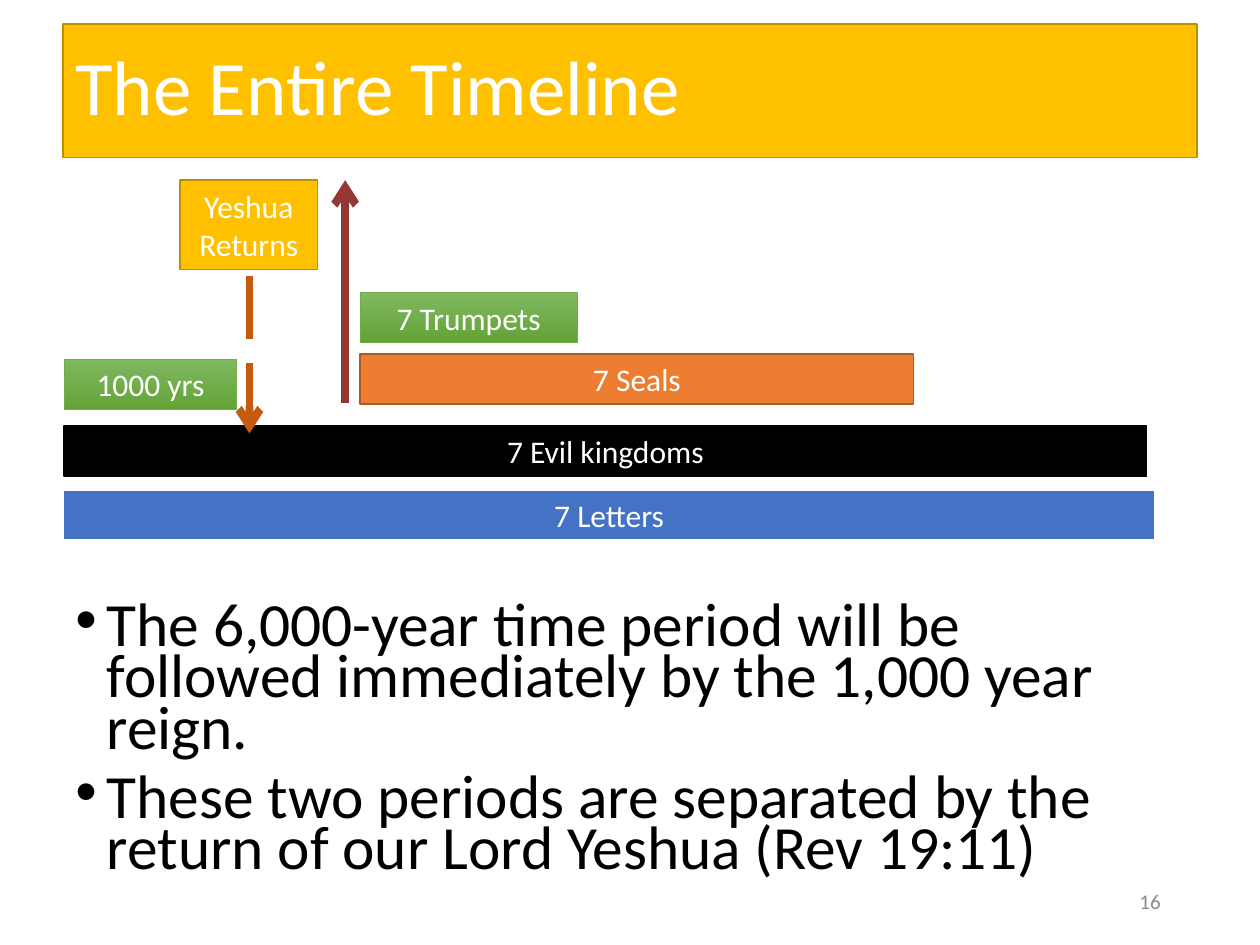
from collections import namedtuple
from dataclasses import dataclass

from lxml import etree
from pptx import Presentation
from pptx import util as u
from pptx.dml.color import RGBColor
from pptx.enum import dml, shapes, text
from pptx.oxml.ns import qn

COLUMNS, ROWS = 100, 75  # grid over the 10 x 7.5 inch slide
CELL = u.Inches(0.1)
Box = namedtuple("Box", "col row cols rows")


@dataclass(frozen=True)
class Theme:
    font: str = "Calibri"
    title_size: float = 44
    body_size: float = 35.1
    label_size: float = 18
    number_size: float = 12
    white: str = "FFFFFF"
    black: str = "000000"
    grey: str = "8C8C8C"
    gold: str = "FFC000"
    gold_edge: str = "BD8E00"
    blue: str = "4472C4"
    orange: str = "ED7D31"
    orange_edge: str = "AF5C24"
    green_edge: str = "70AD47"
    greens: tuple = ("81B861", "62A336")
    rise: str = "953735"
    descent: str = "C55A11"


THEME = Theme()


def rgb(code):
    return RGBColor.from_string(code)


def inside(region, col, row, cols, rows):
    """Turn a box relative to a region into a slide box."""
    return Box(region.col + col, region.row + row, cols, rows)


def emu(box):
    return [round(cells * CELL) for cells in box]


def style(para, size, color, align=text.PP_ALIGN.LEFT):
    para.alignment = align
    para.font.name = THEME.font
    para.font.size = u.Pt(size)
    para.font.color.rgb = rgb(color)


def paint(shape, fill):
    """Fill with one colour, or with a top-to-bottom pair."""
    if isinstance(fill, str):
        shape.fill.solid()
        shape.fill.fore_color.rgb = rgb(fill)
        return
    shape.fill.gradient()
    shape.fill.gradient_angle = 270
    for stop, color, position in zip(shape.fill.gradient_stops, fill, (0, 1)):
        stop.color.rgb = rgb(color)
        stop.position = position


def add_block(page, box, words, fill, edge, edge_width=1,
              size=THEME.label_size, align=text.PP_ALIGN.CENTER):
    block = page.shapes.add_shape(shapes.MSO_SHAPE.RECTANGLE, *emu(box))
    block.shadow.inherit = False
    paint(block, fill)
    block.line.color.rgb = rgb(edge)
    block.line.width = u.Pt(edge_width)
    frame = block.text_frame
    frame.word_wrap = True
    frame.vertical_anchor = text.MSO_ANCHOR.MIDDLE
    para = frame.paragraphs[0]
    para.text = words
    style(para, size, THEME.white, align)
    return block


def add_arrow(page, region, col, start_row, end_row, color, dash=None):
    x = round((region.col + col) * CELL)
    start, end = (round((region.row + row) * CELL) for row in (start_row, end_row))
    arrow = page.shapes.add_connector(shapes.MSO_CONNECTOR.STRAIGHT, x, start, x, end)
    arrow.line.color.rgb = rgb(color)
    arrow.line.width = u.Pt(4.5)
    if dash:
        arrow.line.dash_style = dash
    etree.SubElement(arrow.line._get_or_add_ln(), qn("a:tailEnd"), type="arrow")
    etree.SubElement(arrow._element.spPr, qn("a:effectLst"))


def add_title(page, box):
    title = add_block(page, box, "The Entire Timeline", THEME.gold, THEME.gold_edge,
                      size=THEME.title_size, align=text.PP_ALIGN.LEFT)
    title.text_frame.paragraphs[0].line_spacing = 0.9


def add_timeline(page, region):
    bars = [
        ((0, 24.6, 86.7, 4), "7 Letters", THEME.blue, THEME.white, 1.5),
        ((0.1, 19.5, 85.9, 4), "7 Evil kingdoms", THEME.black, THEME.black, 1),
        ((23.6, 13.8, 43.9, 4), "7 Seals", THEME.orange, THEME.orange_edge, 1),
        ((23.6, 8.9, 17.2, 4), "7 Trumpets", THEME.greens, THEME.green_edge, 0.5),
        ((9.3, 0, 10.9, 7.1), "Yeshua Returns", THEME.gold, THEME.gold_edge, 1),
        ((0.1, 14.2, 13.7, 4), "1000 yrs", THEME.greens, THEME.green_edge, 0.5),
    ]
    for place, *look in bars:
        add_block(page, inside(region, *place), *look)
    add_arrow(page, region, 22.4, 17.7, 0, THEME.rise)
    add_arrow(page, region, 14.8, 7.6, 20.1, THEME.descent,
              dml.MSO_LINE.LONG_DASH)


def add_bullet(para):
    props = para._p.get_or_add_pPr()
    props.set("marL", str(u.Inches(0.25)))
    props.set("indent", str(-u.Inches(0.25)))
    etree.SubElement(props, qn("a:buFont"), typeface="Arial")
    etree.SubElement(props, qn("a:buChar"), char="•")


def add_notes(page, box):
    frame = page.shapes.add_textbox(*emu(box)).text_frame
    frame.word_wrap = True
    frame.margin_top = u.Inches(0.46)
    points = [
        "The 6,000-year time period will be followed immediately by the 1,000 year reign.",
        "These two periods are separated by the return of our Lord Yeshua (Rev 19:11)",
    ]
    for index, point in enumerate(points):
        para = frame.add_paragraph() if index else frame.paragraphs[0]
        para.text = point
        para.line_spacing = 0.7
        para.space_before = u.Pt(10 if index else 0)
        add_bullet(para)
        style(para, THEME.body_size, THEME.black)


def add_page_number(page, box):
    frame = page.shapes.add_textbox(*emu(box)).text_frame
    frame.word_wrap = True
    frame.vertical_anchor = text.MSO_ANCHOR.MIDDLE
    para = frame.paragraphs[0]
    para.text = "16"
    style(para, THEME.number_size, THEME.grey, text.PP_ALIGN.RIGHT)


def main():
    deck = Presentation()
    deck.slide_width, deck.slide_height = COLUMNS * CELL, ROWS * CELL
    page = deck.slides.add_slide(deck.slide_layouts[6])
    add_title(page, Box(5, 1.9, 90, 10.6))
    add_notes(page, Box(5, 43.4, 90, 26.1))
    add_page_number(page, Box(70.6, 69.5, 22.5, 4))
    add_timeline(page, Box(5, 14.3, 86.7, 28.6))
    deck.save("out.pptx")


if __name__ == "__main__":
    main()
